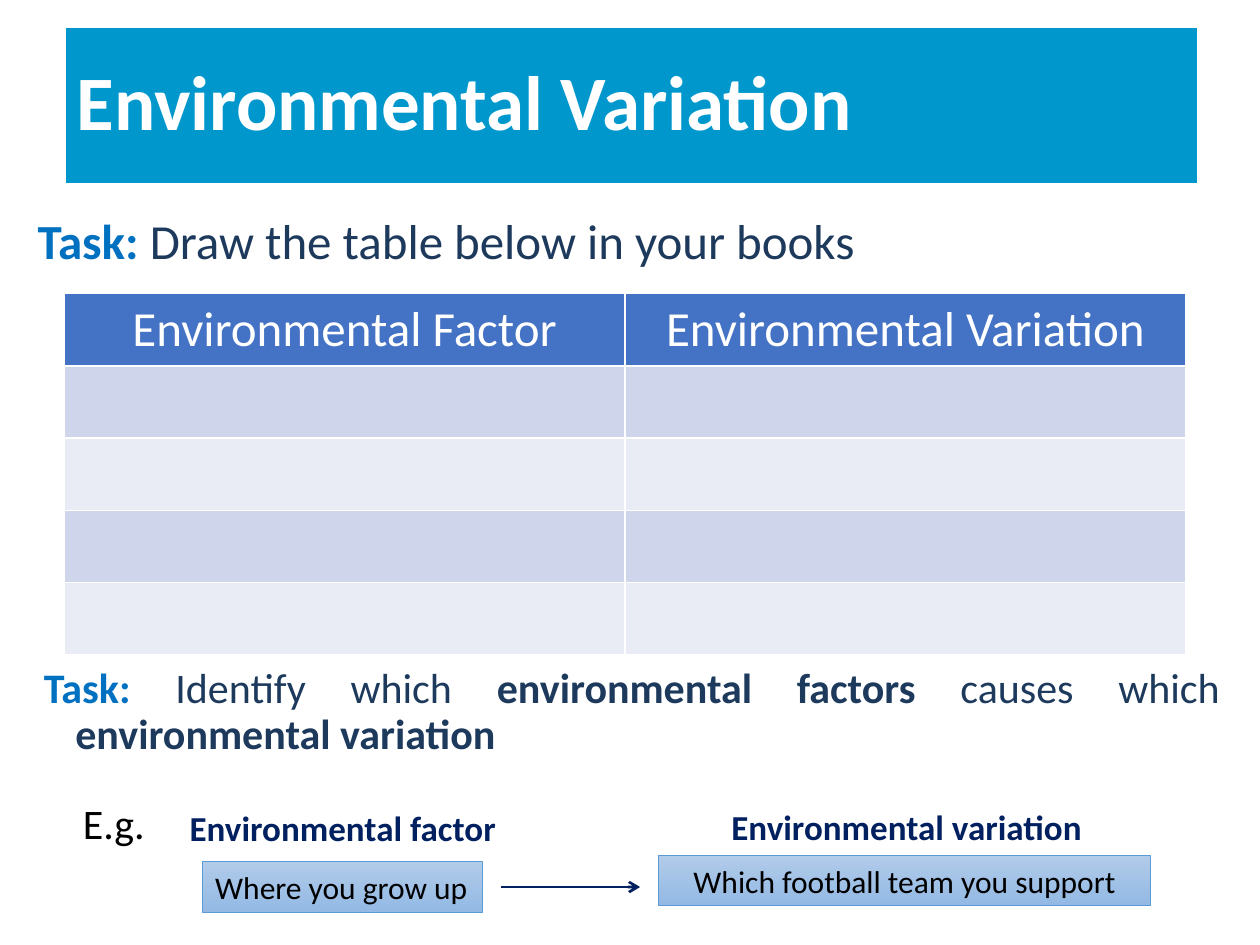
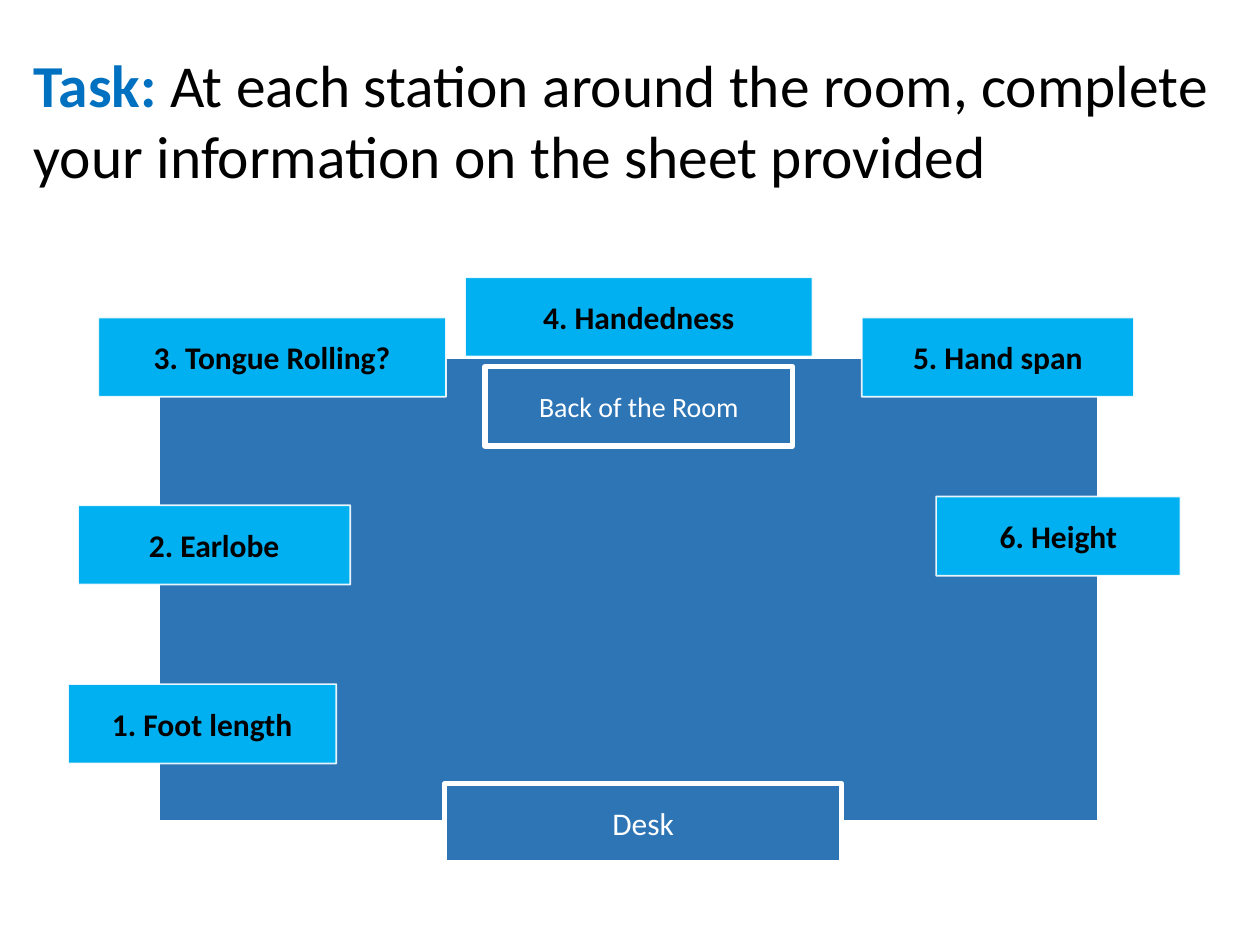
from dataclasses import dataclass

from lxml import etree
from pptx import Presentation
from pptx.dml.color import RGBColor
from pptx.enum.shapes import MSO_CONNECTOR as CONN, MSO_SHAPE as SHAPE
from pptx.enum.text import MSO_ANCHOR as ANCHOR, PP_ALIGN as ALIGN
from pptx.oxml.ns import qn
from pptx.util import Inches, Pt


@dataclass(frozen=True)
class Theme:
    font: str = "Calibri"
    # colours
    white: str = "FFFFFF"
    black: str = "000000"
    band: str = "0097CC"
    task: str = "0070C0"
    ink: str = "1D3A5D"
    navy: str = "002060"
    header: str = "4472C4"
    stripes: tuple = ("E9EBF5", "CFD5EA")
    example: tuple = ("B1CBE9", "93B9E4")
    example_edge: str = "5B9BD5"
    room: str = "2E75B6"
    station: str = "00B0F0"
    # type sizes
    title: int = 44
    instruction: int = 34
    lead: int = 28
    body: int = 24
    label: int = 20
    small: int = 18
    tiny: int = 16


T = Theme()
COLS, ROWS = 100, 75  # square grid over the whole slide
WIDTH, HEIGHT = Inches(10), Inches(7.5)
STATION_ROWS = 6.3


def grid(*lengths):
    """Turn grid units into slide lengths."""
    return [round(n * WIDTH / COLS) for n in lengths]


def rgb(value):
    return RGBColor.from_string(value)


def style_run(r, size, color, bold=False):
    r.font.name, r.font.size, r.font.bold = T.font, Pt(size), bold
    r.font.color.rgb = rgb(color)


def write(tf, pieces, size, align=ALIGN.LEFT, anchor=ANCHOR.TOP):
    """Fill a frame with one paragraph of (text, colour, bold) pieces."""
    tf.word_wrap, tf.vertical_anchor = True, anchor
    p = tf.paragraphs[0]
    p.alignment = align
    for text, color, bold in pieces:
        r = p.add_run()
        r.text = text
        style_run(r, size, color, bold)
    return p


def add_text(s, box, pieces, size, align=ALIGN.LEFT):
    return write(s.shapes.add_textbox(*grid(*box)).text_frame, pieces, size, align)


def add_task(s, box, pieces, size, align=ALIGN.LEFT):
    return add_text(s, box, [("Task: ", T.task, True), *pieces], size, align)


def add_box(s, box, fill, edge, edge_width):
    """Rectangle with a plain fill, or a top-to-bottom gradient for a pair."""
    sp = s.shapes.add_shape(SHAPE.RECTANGLE, *grid(*box))
    sp.shadow.inherit = False
    if isinstance(fill, tuple):
        sp.fill.gradient()
        sp.fill.gradient_angle = 270
        for stop, color in zip(sp.fill.gradient_stops, fill):
            stop.color.rgb = rgb(color)
    else:
        sp.fill.solid()
        sp.fill.fore_color.rgb = rgb(fill)
    sp.line.color.rgb = rgb(edge)
    sp.line.width = Pt(edge_width)
    return sp


def add_title(s, text):
    sp = add_box(s, (5.1, 2.1, 90, 12.5), T.band, T.white, 1.5)
    p = write(sp.text_frame, [(text, T.white, True)], T.title, anchor=ANCHOR.MIDDLE)
    p.line_spacing = 0.9


def add_blank_table(s, box, headings, rows):
    frame = s.shapes.add_table(rows, len(headings), *grid(*box))
    for i, row in enumerate(frame.table.rows):
        for j, cell in enumerate(row.cells):
            cell.fill.solid()
            cell.fill.fore_color.rgb = rgb(T.stripes[i % 2] if i else T.header)
            if i == 0:
                write(cell.text_frame, [(headings[j], T.white, False)],
                      T.lead, ALIGN.CENTER)


def add_arrow(s, x1, x2, y):
    line = s.shapes.add_connector(CONN.STRAIGHT, *grid(x1, y, x2, y))
    line.line.color.rgb = rgb(T.navy)
    line.line.width = Pt(1.5)
    etree.SubElement(line.line._get_or_add_ln(), qn("a:tailEnd"), type="arrow")
    etree.SubElement(line._element.spPr, qn("a:effectLst"))


def add_example(s, heading_box, heading, box, text, align):
    add_text(s, heading_box, [(heading, T.navy, True)], T.label, ALIGN.CENTER)
    sp = add_box(s, box, T.example, T.example_edge, 0.5)
    write(sp.text_frame, [(text, T.black, False)], T.small, align)


def add_furniture(s, box, text, size):
    sp = add_box(s, box, T.room, T.white, 3)
    write(sp.text_frame, [(text, T.white, False)], size, ALIGN.CENTER, ANCHOR.MIDDLE)


def add_station(s, x, y, width, text):
    sp = add_box(s, (x, y, width, STATION_ROWS), T.station, T.white, 1)
    edge = sp.line._get_or_add_ln().find(".//" + qn("a:srgbClr"))
    etree.SubElement(edge, qn("a:alpha"), val="90000")
    write(sp.text_frame, [(text, T.black, True)], T.small, ALIGN.CENTER, ANCHOR.MIDDLE)


def variation_slide(s):
    add_title(s, "Environmental Variation")

    # Table to copy
    add_task(s, (2, 16.2, 95.3, 5.7),
             [("Draw the table below in your books", T.ink, False)], T.lead)
    add_blank_table(s, (5.1, 23.3, 89, 28.7),
                    ("Environmental Factor", "Environmental Variation"), rows=5)

    # Second task, with a hanging indent
    p = add_task(s, (2.5, 52.5, 95.3, 10),
                 [("Identify which ", T.ink, False),
                  ("environmental factors", T.ink, True),
                  (" causes which ", T.ink, False),
                  ("environmental variation", T.ink, True)], T.body, ALIGN.JUSTIFY)
    p.line_spacing, p.space_before = 0.9, Pt(10)
    indent = Inches(0.25)
    p._p.get_or_add_pPr().set("marL", str(indent))
    p._p.get_or_add_pPr().set("indent", str(-indent))

    # Worked example: factor leads to variation
    add_text(s, (5.6, 62.8, 7.1, 5), [("E.g.", T.black, False)], T.body)
    add_example(s, (13.8, 63.5, 26.8, 4.4), "Environmental factor",
                (16.1, 68.4, 22.2, 4), "Where you grow up", ALIGN.LEFT)
    add_arrow(s, 39.8, 50.8, 70.4)
    add_example(s, (56.2, 63.4, 31.5, 4.4), "Environmental variation",
                (52.3, 67.9, 39, 4), "Which football team you support", ALIGN.CENTER)


def stations_slide(s):
    # Room plan
    add_box(s, (12.5, 28.3, 74.8, 37), T.room, T.white, 3)
    add_furniture(s, (35.3, 62.2, 31.5, STATION_ROWS), "Desk", T.small)
    add_furniture(s, (38.5, 29.1, 24.4, STATION_ROWS), "Back of the Room", T.tiny)

    # Stations, clockwise from the front left: column, row, width
    stations = {
        "Foot length": (5.4, 54.3, 21.3),
        "Earlobe": (6.2, 40.1, 21.6),
        "Tongue Rolling?": (7.8, 25.2, 27.6),
        "Handedness": (36.9, 22, 27.6),
        "Hand span": (68.4, 25.2, 21.6),
        "Height": (74.3, 39.4, 19.4),
    }
    for number, (name, place) in enumerate(stations.items(), start=1):
        add_station(s, *place, f"{number}. {name}")

    add_task(s, (1.7, 3.3, 96.7, 12.5),
             [("At each station around the room, complete your information "
               "on the sheet provided", T.black, False)], T.instruction)


def main():
    prs = Presentation()
    prs.slide_width, prs.slide_height = WIDTH, HEIGHT
    blank = prs.slide_layouts[6]
    for build in (variation_slide, stations_slide):
        build(prs.slides.add_slide(blank))
    prs.save("out.pptx")


if __name__ == "__main__":
    main()
